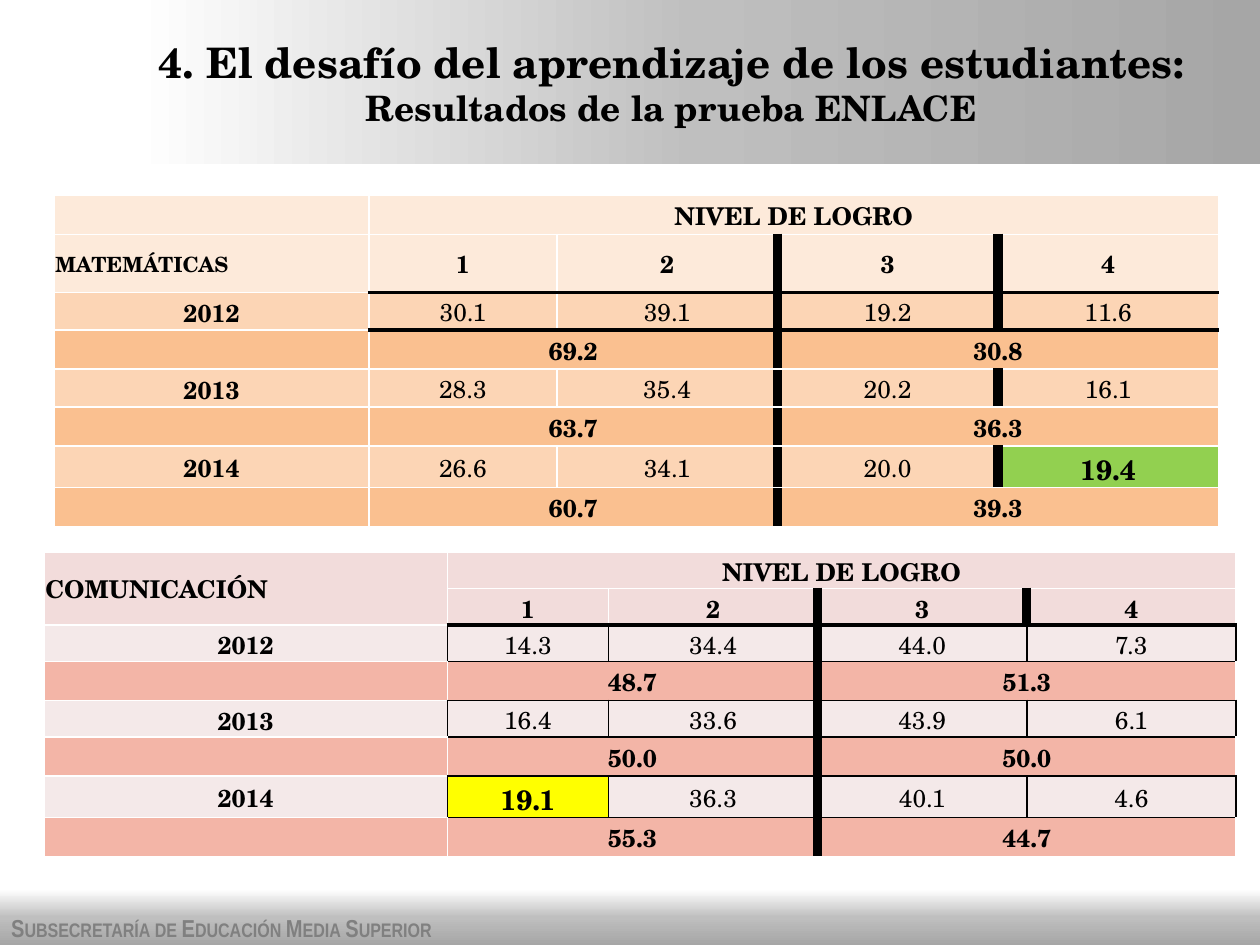
from lxml import etree
from pptx import Presentation
from pptx.dml.color import RGBColor
from pptx.enum.shapes import MSO_SHAPE
from pptx.enum.text import MSO_ANCHOR, MSO_AUTO_SIZE, PP_ALIGN
from pptx.oxml.ns import qn
from pptx.util import Inches, Pt

RECTANGLE = MSO_SHAPE.RECTANGLE
MIDDLE, TOP = MSO_ANCHOR.MIDDLE, MSO_ANCHOR.TOP
LEFT, CENTER = PP_ALIGN.LEFT, PP_ALIGN.CENTER
GROW = MSO_AUTO_SIZE.SHAPE_TO_FIT_TEXT

THEME = {
    "font": "TeX Gyre Schola", "footer_font": "Arial Narrow",
    "title": 24, "subtitle": 20, "body": 14, "highlight": 16, "small": 12,
    "ink": "000000", "grid": "FFFFFF", "footer_ink": "808080",
    "gradient": ((0, "FFFFFF"), (50, "BFBFBF"), (100, "A6A6A6")),
}
TITLE = "4. El desafío del aprendizaje de los estudiantes:"
SUBTITLE = "Resultados de la prueba ENLACE"
FOOTER = "Subsecretaría de Educación Media Superior"
HEADING = "NIVEL DE LOGRO"
LEVELS = ("1", "2", "3", "4")

COMMUNICATION = {
    "subject": "COMUNICACIÓN", "subject_size": THEME["body"], "tall_subject": True,
    "at": (0.35, 4.38), "columns": (3.2, 1.28, 1.66, 1.66, 1.66),
    "rows": (0.29, 0.29, 0.29, 0.29, 0.29, 0.29, 0.33, 0.29),
    "fills": ("F2DCDB", "F4E9E9", "F3B5A7"),
    "highlight": (6, 1, "FFFF00"), "boxed": True,
    "years": (
        ("2012", ("14.3", "34.4", "44.0", "7.3"), ("48.7", "51.3")),
        ("2013", ("16.4", "33.6", "43.9", "6.1"), ("50.0", "50.0")),
        ("2014", ("19.1", "36.3", "40.1", "4.6"), ("55.3", "44.7")),
    ),
}
MATHEMATICS = {
    "subject": "MATEMÁTICAS", "subject_size": THEME["small"], "tall_subject": False,
    "at": (0.43, 1.55), "columns": (2.5, 1.49, 1.75, 1.75, 1.75),
    "rows": (0.3, 0.46, 0.3, 0.29, 0.3, 0.3, 0.33, 0.3),
    "fills": ("FDEADA", "FCD5B5", "FAC090"),
    "highlight": (6, 4, "92D050"), "boxed": False,
    "years": (
        ("2012", ("30.1", "39.1", "19.2", "11.6"), ("69.2", "30.8")),
        ("2013", ("28.3", "35.4", "20.2", "16.1"), ("63.7", "36.3")),
        ("2014", ("26.6", "34.1", "20.0", "19.4"), ("60.7", "39.3")),
    ),
}


def write(paragraph, text, size=THEME["body"], font=THEME["font"], color=THEME["ink"],
          bold=True, align=CENTER, small_caps=False):
    paragraph.alignment = align
    run = paragraph.add_run()
    run.text = text
    run.font.size, run.font.name, run.font.bold = Pt(size), font, bold
    run.font.color.rgb = RGBColor.from_string(color)
    if small_caps:
        run.font._element.set("cap", "small")


def add_color(parent, color):
    etree.SubElement(parent, qn("a:srgbClr"), val=color)


def add_band(slide, box, angle):
    band = slide.shapes.add_shape(RECTANGLE, *map(Inches, box))
    band.shadow.inherit = False
    band.line.fill.background()
    band.fill.gradient()
    band.fill.gradient_angle = angle
    stops = band._element.spPr.find(".//" + qn("a:gsLst"))
    for stop in list(stops):
        stops.remove(stop)
    for position, color in THEME["gradient"]:
        add_color(etree.SubElement(stops, qn("a:gs"), pos=str(position * 1000)), color)


def add_text_frame(slide, box, anchor):
    frame = slide.shapes.add_textbox(*map(Inches, box)).text_frame
    frame.word_wrap = True
    frame.vertical_anchor = anchor
    return frame


def vertical_edge(row, column, boxed):
    value_row = row in (2, 4, 6)
    if column == 3 and row >= 1:
        return THEME["ink"], 6
    if column == 4 and (row == 1 or value_row and not boxed):
        return THEME["ink"], 6
    if boxed and value_row and column >= 1:
        return THEME["ink"], 1
    return THEME["grid"], 1


def horizontal_edge(row, column, boxed):
    if column >= 1 and (row == 2 or row == 3 and not boxed):
        return THEME["ink"], 2.25
    if boxed and column >= 1 and 3 <= row <= 7:
        return THEME["ink"], 1
    return THEME["grid"], 1


def set_borders(cell, edges):
    properties = cell._tc.get_or_add_tcPr()
    for index, (side, (color, width)) in enumerate(edges.items()):
        line = etree.Element(qn("a:ln" + side), w=str(Pt(width)))
        add_color(etree.SubElement(line, qn("a:solidFill")), color)
        properties.insert(index, line)


def add_results(slide, subject):
    columns, rows, boxed = subject["columns"], subject["rows"], subject["boxed"]
    box = (*subject["at"], sum(columns), sum(rows))
    table = slide.shapes.add_table(len(rows), len(columns), *map(Inches, box)).table
    table.first_row = table.horz_banding = False
    for column, width in zip(table.columns, columns):
        column.width = Inches(width)
    for row, height in zip(table.rows, rows):
        row.height = Inches(height)

    subject_row = 0 if subject["tall_subject"] else 1
    texts = {(0, 1): HEADING, (subject_row, 0): subject["subject"]}
    spans = {(0, 1): (1, 4)}
    if subject["tall_subject"]:
        spans[0, 0] = (2, 1)
    texts.update({(1, column): level for column, level in enumerate(LEVELS, 1)})
    for index, (year, values, totals) in enumerate(subject["years"]):
        row = 2 + 2 * index
        texts.update({(row, column): text for column, text in enumerate((year, *values))})
        for column, total in zip((1, 3), totals):
            texts[row + 1, column] = total
            spans[row + 1, column] = (1, 2)
    for (row, column), (height, width) in spans.items():
        table.cell(row, column).merge(table.cell(row + height - 1, column + width - 1))

    header_fill, value_fill, total_fill = subject["fills"]
    highlight_row, highlight_column, highlight_fill = subject["highlight"]
    for row in range(len(rows)):
        for column in range(len(columns)):
            cell = table.cell(row, column)
            highlighted = (row, column) == (highlight_row, highlight_column)
            fill = header_fill if row < 2 else total_fill if row % 2 else value_fill
            cell.fill.solid()
            cell.fill.fore_color.rgb = RGBColor.from_string(highlight_fill if highlighted else fill)
            cell.margin_left = cell.margin_right = cell.margin_top = Inches(0.01)
            cell.margin_bottom = 0
            cell.vertical_anchor = MIDDLE
            height, width = spans.get((row, column), (1, 1))
            edges = {
                "L": vertical_edge(row, column, boxed),
                "R": vertical_edge(row, column + width, boxed),
                "T": horizontal_edge(row, column, boxed),
                "B": horizontal_edge(row + height, column, boxed),
            }
            if cell.is_spanned:
                del edges["T" if column == 0 else "L"]
            set_borders(cell, edges)
            if (row, column) in texts:
                is_subject = (row, column) == (subject_row, 0)
                size = subject["subject_size"] if is_subject else THEME["body"]
                is_value = row in (2, 4, 6) and column > 0
                write(cell.text_frame.paragraphs[0], texts[row, column],
                      size=THEME["highlight"] if highlighted else size,
                      bold=highlighted or not is_value,
                      align=LEFT if is_subject else CENTER)


def main():
    deck = Presentation()
    deck.slide_width, deck.slide_height = Inches(10), Inches(7.5)
    slide = deck.slides.add_slide(deck.slide_layouts[6])

    add_band(slide, (0, 7.06, 10, 0.44), 270)
    footer = add_text_frame(slide, (-0.01, 7.2, 6.46, 0.34), TOP)
    footer.auto_size = GROW
    write(footer.paragraphs[0], FOOTER, font=THEME["footer_font"],
          color=THEME["footer_ink"], align=LEFT, small_caps=True)
    add_band(slide, (1.06, 0, 8.94, 1.3), 0)

    for subject in (COMMUNICATION, MATHEMATICS):
        add_results(slide, subject)

    title = add_text_frame(slide, (0.98, 0, 8.7, 1.31), MIDDLE)
    write(title.paragraphs[0], TITLE, size=THEME["title"])
    write(title.add_paragraph(), SUBTITLE, size=THEME["subtitle"])
    deck.save("out.pptx")


if __name__ == "__main__":
    main()
